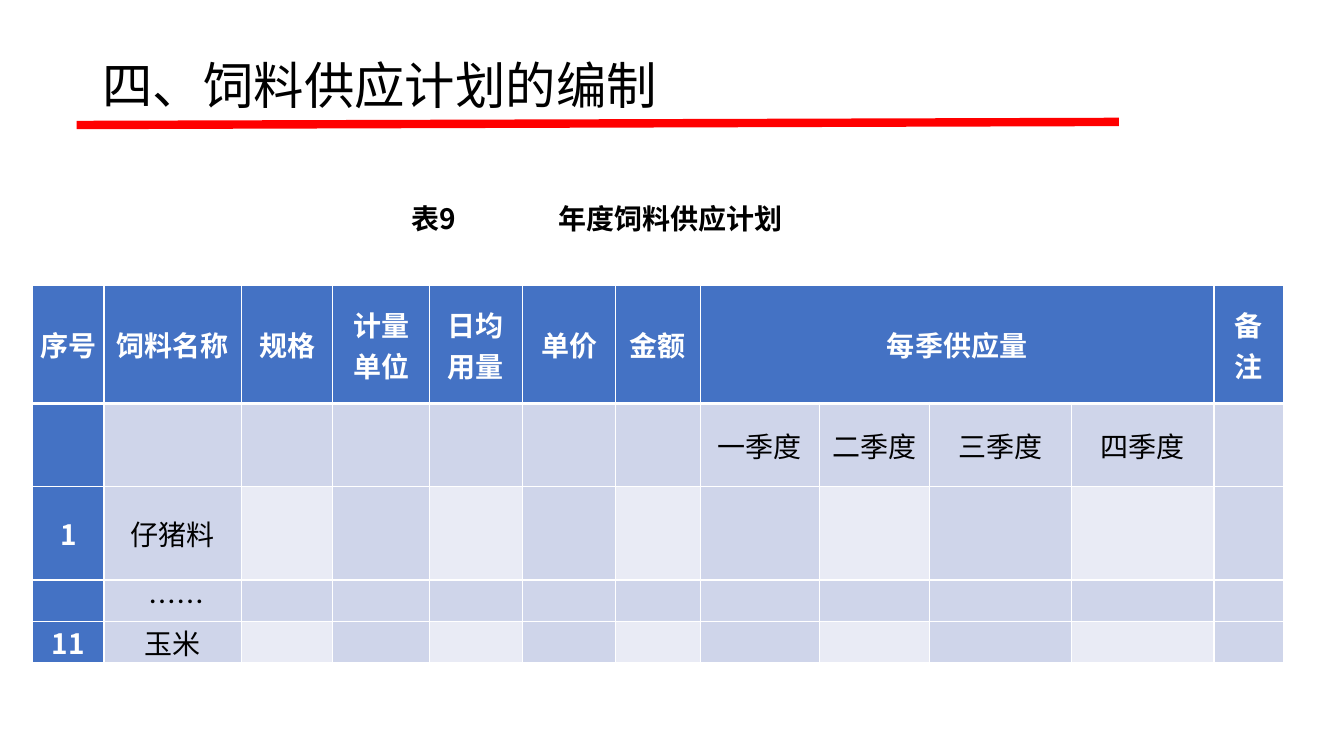
from dataclasses import dataclass

from lxml.etree import SubElement
from pptx import Presentation
from pptx.dml.color import RGBColor
from pptx.enum.shapes import MSO_CONNECTOR
from pptx.enum.text import MSO_ANCHOR, PP_ALIGN
from pptx.oxml.ns import qn
from pptx.util import Pt


@dataclass(frozen=True)
class Theme:
    font: str = "Noto Sans CJK SC"
    black: str = "000000"
    white: str = "FFFFFF"
    rule: str = "FF0000"
    header: str = "4472C4"
    band: str = "CFD5EA"
    pale: str = "E9EBF5"
    title_size: float = 36
    body_size: float = 20


THEME = Theme()

COLUMN_WIDTHS = [51, 98.5, 65, 69, 66.5, 66.5, 60.5, 85, 79, 101.5, 101.5, 50]
ROW_HEIGHTS = [84.3, 59, 67, 29.5, 29.5]
HEADINGS = ["序号", "饲料名称", "规格", "计量单位", "日均用量", "单价", "金额",
            "每季供应量", "", "", "", "备注"]
FIRST_QUARTER, LAST_QUARTER = 7, 10
QUARTERS = ["一季度", "二季度", "三季度", "四季度"]
PLAN_ROWS = [
    HEADINGS,
    [""] * FIRST_QUARTER + QUARTERS + [""],
    ["1", "仔猪料"] + [""] * 10,
    ["", " ……"] + [""] * 10,
    ["11", "玉米"] + [""] * 10,
]


def add_run(paragraph, text, size, color=THEME.black, bold=False, underline=False):
    run = paragraph.add_run()
    run.text = text
    font = run.font
    font.size = Pt(size)
    font.bold = bold
    font.underline = underline
    font.color.rgb = RGBColor.from_string(color)
    font.name = THEME.font
    SubElement(run._r.get_or_add_rPr(), qn("a:ea"), typeface=THEME.font)


def add_text_box(slide, left, top, width, height, anchor=MSO_ANCHOR.TOP):
    """Add a wrapping text box and return its first paragraph."""
    frame = slide.shapes.add_textbox(Pt(left), Pt(top), Pt(width), Pt(height)).text_frame
    frame.word_wrap = True
    frame.vertical_anchor = anchor
    return frame.paragraphs[0]


def add_tab_stops(paragraph, positions):
    tabs = SubElement(paragraph._p.get_or_add_pPr(), qn("a:tabLst"))
    for position in positions:
        SubElement(tabs, qn("a:tab"), pos=str(Pt(position)), algn="l")


def add_rule(slide, start, end, width):
    rule = slide.shapes.add_connector(MSO_CONNECTOR.STRAIGHT, *map(Pt, start + end))
    rule.line.color.rgb = RGBColor.from_string(THEME.rule)
    rule.line.width = Pt(width)
    SubElement(rule._element.spPr, qn("a:effectLst"))


def set_borders(cell, top, bottom):
    properties = cell._tc.get_or_add_tcPr()
    for side, width in (("lnL", 1), ("lnR", 1), ("lnT", top), ("lnB", bottom)):
        line = SubElement(properties, qn(f"a:{side}"), w=str(Pt(width)))
        fill = SubElement(line, qn("a:solidFill"))
        SubElement(fill, qn("a:srgbClr"), val=THEME.white)


def cell_fill(row, column):
    if row == 0 or column == 0:
        return THEME.header
    if row in (2, 4) and column >= 2 and column % 2 == 0:
        return THEME.pale
    return THEME.band


def style_cell(cell, text, row, column):
    set_borders(cell, top=3 if row == 1 else 1, bottom=3 if row == 0 else 1)
    cell.fill.solid()
    cell.fill.fore_color.rgb = RGBColor.from_string(cell_fill(row, column))
    cell.margin_left = cell.margin_right = Pt(5.04)
    cell.margin_top = cell.margin_bottom = Pt(0)
    cell.vertical_anchor = MSO_ANCHOR.MIDDLE
    if text:
        paragraph = cell.text_frame.paragraphs[0]
        paragraph.alignment = PP_ALIGN.CENTER
        is_heading = row == 0 or column == 0
        add_run(paragraph, text, THEME.body_size,
                THEME.white if is_heading else THEME.black, bold=is_heading)


def add_plan_table(slide, left, top):
    plan = slide.shapes.add_table(
        len(ROW_HEIGHTS), len(COLUMN_WIDTHS), Pt(left), Pt(top),
        Pt(sum(COLUMN_WIDTHS)), Pt(sum(ROW_HEIGHTS))).table
    for column, width in zip(plan.columns, COLUMN_WIDTHS):
        column.width = Pt(width)
    for row, height in zip(plan.rows, ROW_HEIGHTS):
        row.height = Pt(height)
    plan.cell(0, FIRST_QUARTER).merge(plan.cell(0, LAST_QUARTER))
    for row, texts in enumerate(PLAN_ROWS):
        for column, text in enumerate(texts):
            style_cell(plan.cell(row, column), text, row, column)


def main():
    deck = Presentation()
    deck.slide_width, deck.slide_height = Pt(960), Pt(540)
    slide = deck.slides.add_slide(deck.slide_layouts[6])

    add_rule(slide, (54.7, 89.3), (799.2, 87.1), 6)
    title = add_text_box(slide, 66.2, 28.8, 828, 69.1, MSO_ANCHOR.MIDDLE)
    title.line_spacing = 0.9
    add_run(title, "四、饲料供应计划的编制", THEME.title_size)

    add_plan_table(slide, 23.3, 204)

    caption = add_text_box(slide, 286.6, 140.4, 480.2, 31.7)
    add_tab_stops(caption, (59, 100, 105))
    for text, underline in (("表9\t", False), ("\t", True), ("\t年度饲料供应计划", False)):
        add_run(caption, text, THEME.body_size, bold=True, underline=underline)

    deck.save("out.pptx")


if __name__ == "__main__":
    main()
